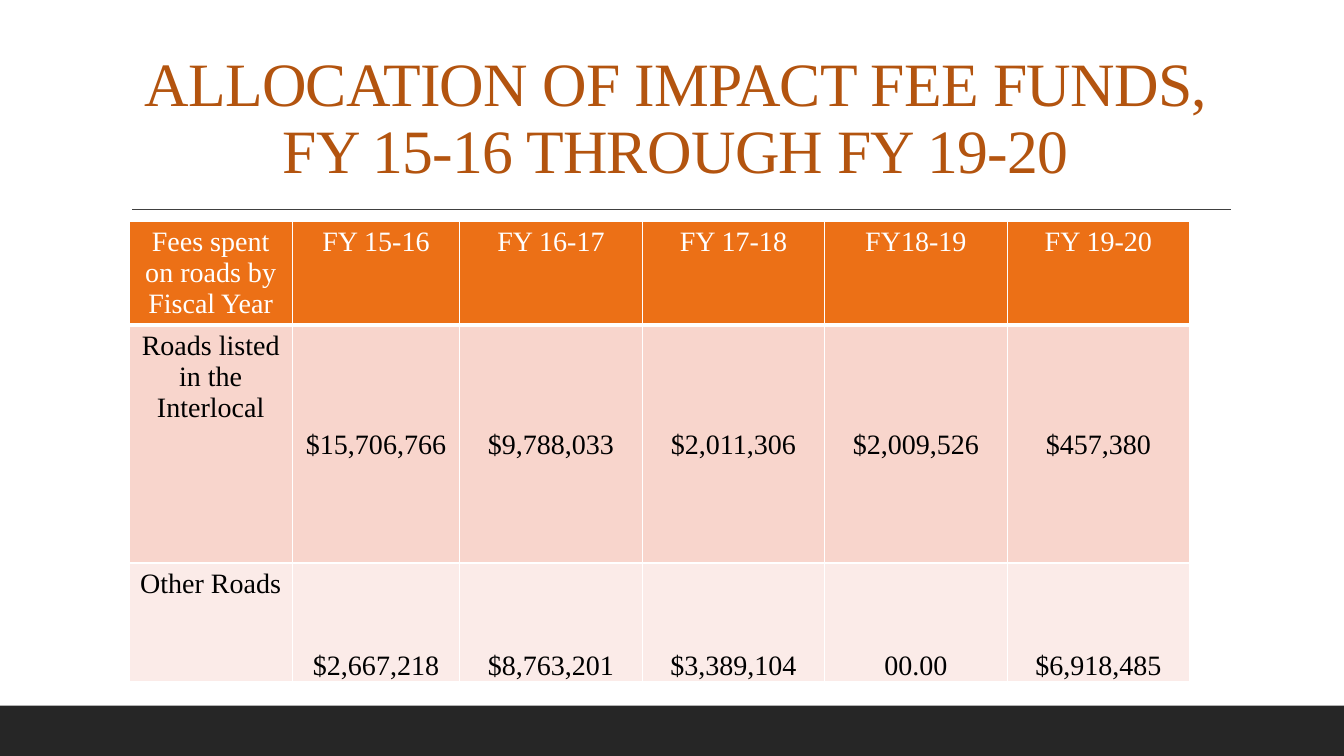
from dataclasses import dataclass

from lxml import etree
from pptx import Presentation
from pptx import util as u
from pptx.dml.color import RGBColor
from pptx.enum import shapes, text
from pptx.oxml.ns import qn


@dataclass(frozen=True)
class Theme:
    font: str = "Times New Roman"
    title: str = "B3540F"
    head: str = "EC7016"
    bands: tuple = ("F8D5CC", "FBEBE8")
    light: str = "FFFFFF"
    dark: str = "000000"
    bar: str = "262626"
    rule: str = "404040"
    title_size: int = 44
    cell_size: int = 20


THEME = Theme()
TITLE = "ALLOCATION OF IMPACT FEE FUNDS, FY 15-16 THROUGH FY 19-20"
ROWS = [
    ["Fees spent on roads by Fiscal Year", "FY 15-16", "FY 16-17",
     "FY 17-18", "FY18-19", "FY 19-20"],
    ["Roads listed in the Interlocal", "$15,706,766", "$9,788,033",
     "$2,011,306", "$2,009,526", "$457,380"],
    ["Other Roads", "$2,667,218", "$8,763,201",
     "$3,389,104", "00.00", "$6,918,485"],
]
WIDTHS = [1.62, 1.66] + [1.81] * 4
HEIGHTS = [1.02, 2.36, 1.18]


def paint(fill, color):
    fill.solid()
    fill.fore_color.rgb = RGBColor.from_string(color)


def write(frame, words, size, color, lead=None, track=None):
    """Put one centred paragraph in a text frame; track is in points."""
    para = frame.paragraphs[0]
    para.alignment = text.PP_ALIGN.CENTER
    if lead:
        para.line_spacing = lead
    run = para.add_run()
    run.text = words
    run.font.name = THEME.font
    run.font.size = u.Pt(size)
    run.font.color.rgb = RGBColor.from_string(color)
    if track:
        run.font._element.set("spc", str(round(track * 100)))


def add_bar(slide):
    bar = slide.shapes.add_shape(
        shapes.MSO_SHAPE.RECTANGLE,
        u.Inches(0), u.Inches(7), u.Inches(13.33), u.Inches(0.5))
    bar.shadow.inherit = False
    paint(bar.fill, THEME.bar)
    bar.line.fill.background()


def add_rule(slide):
    rule = slide.shapes.add_connector(
        shapes.MSO_CONNECTOR.STRAIGHT,
        u.Inches(1.31), u.Inches(2.08), u.Inches(12.21), u.Inches(2.08))
    paint(rule.line.fill, THEME.rule)
    rule.line.width = u.Pt(1)
    etree.SubElement(rule._element.spPr, qn("a:effectLst"))


def set_title(slide):
    title = slide.shapes.title
    title.left, title.top = u.Inches(1.2), u.Inches(0.31)
    title.width, title.height = u.Inches(11), u.Inches(1.59)
    frame = title.text_frame
    frame.word_wrap = True
    frame.auto_size = text.MSO_AUTO_SIZE.NONE
    frame.vertical_anchor = text.MSO_ANCHOR.BOTTOM
    write(frame, TITLE, THEME.title_size, THEME.title, lead=0.9, track=-0.5)


def add_edges(cell, base):
    """Draw the cell's borders; base is the width of the lower one."""
    props = cell._tc.get_or_add_tcPr()
    for side, width in zip("LRTB", (1, 1, 1, base)):
        edge = etree.SubElement(props, qn(f"a:ln{side}"), w=str(u.Pt(width)))
        fill = etree.SubElement(edge, qn("a:solidFill"))
        etree.SubElement(fill, qn("a:srgbClr"), val=THEME.light)


def add_grid(slide):
    grid = slide.shapes.add_table(
        len(ROWS), len(WIDTHS), u.Inches(1.28), u.Inches(2.2),
        u.Inches(sum(WIDTHS)), u.Inches(sum(HEIGHTS))).table
    for col, width in zip(grid.columns, WIDTHS):
        col.width = u.Inches(width)
    for row, height in zip(grid.rows, HEIGHTS):
        row.height = u.Inches(height)

    fills = (THEME.head, *THEME.bands)
    anchors = (text.MSO_ANCHOR.TOP, text.MSO_ANCHOR.MIDDLE,
               text.MSO_ANCHOR.BOTTOM)
    for r, row in enumerate(ROWS):
        for c, words in enumerate(row):
            cell = grid.cell(r, c)
            amount = r > 0 and c > 0
            add_edges(cell, base=1 if r else 3)
            paint(cell.fill, fills[r])
            if amount:
                cell.vertical_anchor = anchors[r]
                cell.margin_left = cell.margin_right = u.Inches(0.07)
                cell.margin_top = cell.margin_bottom = u.Inches(0)
            write(cell.text_frame, words, THEME.cell_size,
                  THEME.dark if r else THEME.light,
                  lead=1.07 if amount else None)


def main():
    deck = Presentation()
    deck.slide_width, deck.slide_height = u.Inches(13.33), u.Inches(7.5)
    slide = deck.slides.add_slide(deck.slide_layouts.get_by_name("Title Only"))
    paint(slide.background.fill, THEME.light)
    add_bar(slide)
    add_rule(slide)
    set_title(slide)
    add_grid(slide)
    deck.save("out.pptx")


if __name__ == "__main__":
    main()
